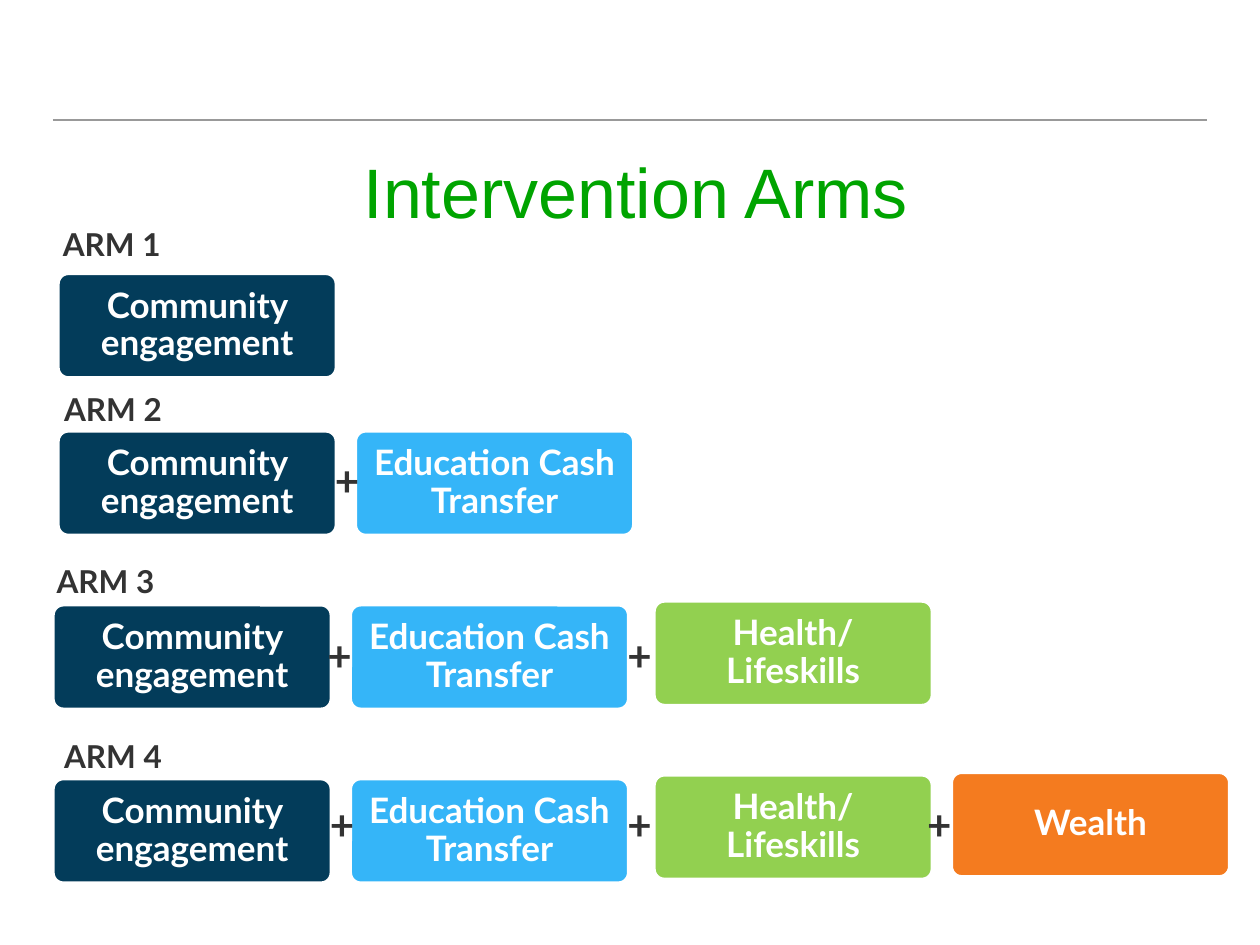
from pptx import Presentation, util as u
from pptx.dml.color import RGBColor
from pptx.enum import shapes, text
from pptx.oxml.ns import qn
from lxml import etree

WIDTH, HEIGHT = 10, 7.5
MARGIN = 0.42
BOX_WIDTH, BOX_HEIGHT = 2.21, 0.83

# Label, fill, left edge and lift above the row's top line
COMPONENTS = [
    ("Community engagement", "033C5A", 0.42, 0),
    ("Education Cash Transfer", "35B5F8", 2.78, 0),
    ("Health/Lifeskills", "92D050", 5.19, 0.03),
    ("Wealth", "F47B1F", 7.55, 0.05),
]
# Box top, box shift, label left, label top, plus top, plus lefts;
# each arm has one component more than the arm before it
ARMS = [
    (2.17, 0.04, 0.40, 1.74, 0, []),
    (3.42, 0.04, 0.41, 3.05, 3.56, [2.56]),
    (4.80, 0, 0.35, 4.41, 4.95, [2.50, 4.88]),
    (6.18, 0, 0.41, 5.80, 6.29, [2.52, 4.88, 7.26]),
]


def colour(value):
    return RGBColor.from_string(value)


def inches(*lengths):
    return [u.Inches(length) for length in lengths]


def add_run(paragraph, words, size, fill, font="Lato", bold=True):
    run = paragraph.add_run()
    run.text = words
    run.font.name = font
    run.font.size = u.Pt(size)
    run.font.bold = bold
    run.font.color.rgb = colour(fill)


def add_text(slide, words, left, top, width, height, size):
    box = slide.shapes.add_textbox(*inches(left, top, width, height))
    box.text_frame.word_wrap = True
    add_run(box.text_frame.paragraphs[0], words, size, "333333")


def add_title(slide, words):
    box = slide.shapes.add_textbox(*inches(MARGIN, 1.08, 9.25, 5.5))
    frame = box.text_frame
    frame.word_wrap = True
    frame.margin_top = u.Inches(0.1)
    paragraph = frame.paragraphs[0]
    paragraph.alignment = text.PP_ALIGN.CENTER
    add_run(paragraph, words, 40, "00A400", "Arial", False)


def add_rule(slide, top):
    rule = slide.shapes.add_connector(
        shapes.MSO_CONNECTOR.STRAIGHT, *inches(MARGIN, top, WIDTH - MARGIN, top))
    rule.line.color.rgb = colour("999999")
    rule.line.width = u.Pt(1.25)
    etree.SubElement(rule._element.spPr, qn("a:effectLst"))


def add_component(slide, words, fill, left, top):
    shape = slide.shapes.add_shape(
        shapes.MSO_SHAPE.ROUNDED_RECTANGLE,
        *inches(left, top, BOX_WIDTH, BOX_HEIGHT))
    shape.adjustments[0] = 0.1
    shape.shadow.inherit = False
    shape.fill.solid()
    shape.fill.fore_color.rgb = colour(fill)
    shape.line.color.rgb = colour("FFFFFF")
    shape.line.width = u.Pt(2)
    frame = shape.text_frame
    frame.word_wrap = True
    frame.vertical_anchor = text.MSO_ANCHOR.MIDDLE
    frame.margin_left = frame.margin_right = u.Inches(0.08)
    frame.margin_top = frame.margin_bottom = u.Inches(0.08)
    paragraph = frame.paragraphs[0]
    paragraph.alignment = text.PP_ALIGN.CENTER
    paragraph.line_spacing = 0.9
    add_run(paragraph, words, 20, "FFFFFF")


def main():
    presentation = Presentation()
    presentation.slide_width, presentation.slide_height = inches(WIDTH, HEIGHT)
    slide = presentation.slides.add_slide(presentation.slide_layouts[6])
    add_rule(slide, 0.95)
    add_title(slide, "Intervention Arms")
    for number, arm in enumerate(ARMS, start=1):
        top, shift, label_left, label_top, plus_top, plus_lefts = arm
        for words, fill, left, lift in COMPONENTS[:number]:
            add_component(slide, words, fill, left + shift, top - lift)
        for left in plus_lefts:
            add_text(slide, "+", left, plus_top, 0.42, 0.5, 24)
        add_text(slide, f"ARM {number}", label_left, label_top, 1.08, 0.4, 18)
    presentation.save("out.pptx")


if __name__ == "__main__":
    main()
